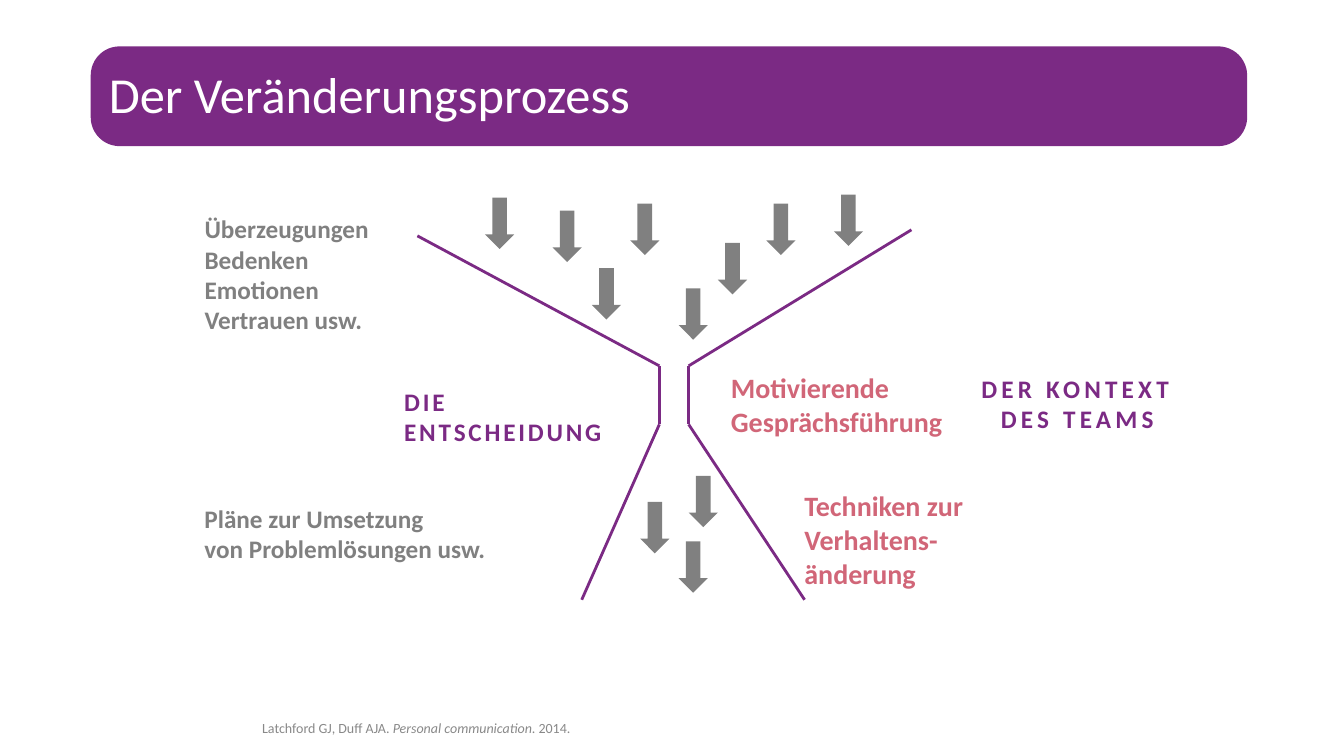
from lxml import etree
from pptx import Presentation
from pptx.dml.color import RGBColor
from pptx.enum.shapes import MSO_CONNECTOR, MSO_SHAPE
from pptx.enum.text import MSO_ANCHOR, MSO_AUTO_SIZE, PP_ALIGN
from pptx.oxml.ns import qn
from pptx.util import Inches, Pt

STRAIGHT = MSO_CONNECTOR.STRAIGHT
ROUNDED_RECTANGLE = MSO_SHAPE.ROUNDED_RECTANGLE
DOWN_ARROW = MSO_SHAPE.DOWN_ARROW
TOP, MIDDLE, BOTTOM = MSO_ANCHOR.TOP, MSO_ANCHOR.MIDDLE, MSO_ANCHOR.BOTTOM
LEFT, CENTER = PP_ALIGN.LEFT, PP_ALIGN.CENTER
NO_AUTOFIT = MSO_AUTO_SIZE.NONE

PURPLE, ROSE, GREY = "7B2A84", "D16678", "808080"
WHITE, SOURCE_GREY = "FFFFFF", "898989"


def color(hex_value):
    return RGBColor.from_string(hex_value)


def write_text(shape, paragraphs, size, hex_value, bold=False, align=LEFT,
               anchor=TOP, line_spacing=1.0, spacing=0, inset=None):
    frame = shape.text_frame
    frame.word_wrap = True
    frame.auto_size = NO_AUTOFIT
    frame.vertical_anchor = anchor
    if inset is not None:
        frame.margin_left = frame.margin_right = Inches(inset)
        frame.margin_top = frame.margin_bottom = Inches(inset)
    for index, runs in enumerate(paragraphs):
        paragraph = frame.paragraphs[0] if index == 0 else frame.add_paragraph()
        paragraph.alignment = align
        paragraph.line_spacing = line_spacing
        paragraph.space_before = Pt(0)
        for text, italic in runs:
            run = paragraph.add_run()
            run.text = text
            run.font.name = "Calibri"
            run.font.size = Pt(size)
            run.font.bold = bold
            run.font.italic = italic
            run.font.color.rgb = color(hex_value)
            if spacing:
                run.font._element.set("spc", str(spacing * 100))


presentation = Presentation()
presentation.slide_width = Inches(13.33)
presentation.slide_height = Inches(7.5)
slide = presentation.slides.add_slide(presentation.slide_layouts[1])
shapes = slide.shapes

title = shapes.title
title.left, title.top = Inches(1.08), Inches(0.62)
title.width, title.height = Inches(11.18), Inches(0.72)
write_text(title, [[("Der Veränderungsprozess", False)]], 36, WHITE,
           anchor=MIDDLE, line_spacing=0.8, inset=0)

banner = shapes.add_shape(ROUNDED_RECTANGLE, Inches(0.9), Inches(0.46),
                          Inches(11.47), Inches(0.99))
banner.adjustments[0] = 0.29
banner.shadow.inherit = False
banner.fill.solid()
banner.fill.fore_color.rgb = color(PURPLE)
banner.line.fill.background()
title._element.addprevious(banner._element)

source = slide.placeholders[1]
source.left, source.top = Inches(2.6), Inches(6.46)
source.width, source.height = Inches(9.82), Inches(0.85)
source_properties = source.text_frame.paragraphs[0]._p.get_or_add_pPr()
source_properties.set("marL", "0")
source_properties.set("indent", "0")
etree.SubElement(source_properties, qn("a:buNone"))
source_runs = [("Latchford GJ, Duff AJA. ", False),
               ("Personal communication", True), (". 2014.", False)]
write_text(source, [source_runs], 10, SOURCE_GREY, anchor=BOTTOM,
           line_spacing=0.9, inset=0)

funnel_sides = [
    [(4.14, 2.34), (6.54, 3.63), (6.54, 4.21), (5.77, 5.95)],
    [(9.04, 2.28), (6.83, 3.63), (6.83, 4.21), (7.98, 5.95)],
]
for side in funnel_sides:
    for start, end in zip(side, side[1:]):
        line = shapes.add_connector(STRAIGHT, *map(Inches, start + end))
        line.line.color.rgb = color(PURPLE)
        line.line.width = Pt(2)
        etree.SubElement(line._element.spPr, qn("a:effectLst"))

arrow_positions = [
    (4.81, 1.96), (5.48, 2.09), (5.87, 2.66), (6.25, 2.02),
    (6.73, 2.86), (7.6, 2.02), (7.12, 2.41), (8.27, 1.93),
    (6.35, 4.98), (6.73, 5.37), (6.83, 4.72),
]
for left, top in arrow_positions:
    arrow = shapes.add_shape(DOWN_ARROW, Inches(left), Inches(top),
                             Inches(0.29), Inches(0.51))
    arrow.shadow.inherit = False
    arrow.fill.solid()
    arrow.fill.fore_color.rgb = color(GREY)
    arrow.line.fill.background()

labels = [
    ((7.15, 3.63, 2.38, 0.77), ["Motivierende Gesprächsführung"], 20, ROSE, LEFT, 0),
    ((3.91, 3.78, 2.41, 0.7), ["DIE ENTSCHEIDUNG"], 18, PURPLE, LEFT, 2),
    ((7.88, 4.8, 2.97, 1.1), ["Techniken zur", "Verhaltens-", "änderung"],
     20, ROSE, LEFT, 0),
    ((1.93, 4.94, 3.16, 0.7), ["Pläne zur Umsetzung", "von Problemlösungen usw."],
     18, GREY, LEFT, 0),
    ((1.93, 2.07, 3.18, 1.3),
     ["Überzeugungen", "Bedenken", "Emotionen", "Vertrauen usw."], 18, GREY, LEFT, 0),
    ((9.33, 3.65, 2.71, 0.7), ["DER KONTEXT DES TEAMS"], 18, PURPLE, CENTER, 3),
]
for bounds, lines, size, hex_value, align, spacing in labels:
    label = shapes.add_textbox(*map(Inches, bounds))
    write_text(label, [[(text, False)] for text in lines], size, hex_value,
               bold=True, align=align, spacing=spacing)

presentation.save("out.pptx")
